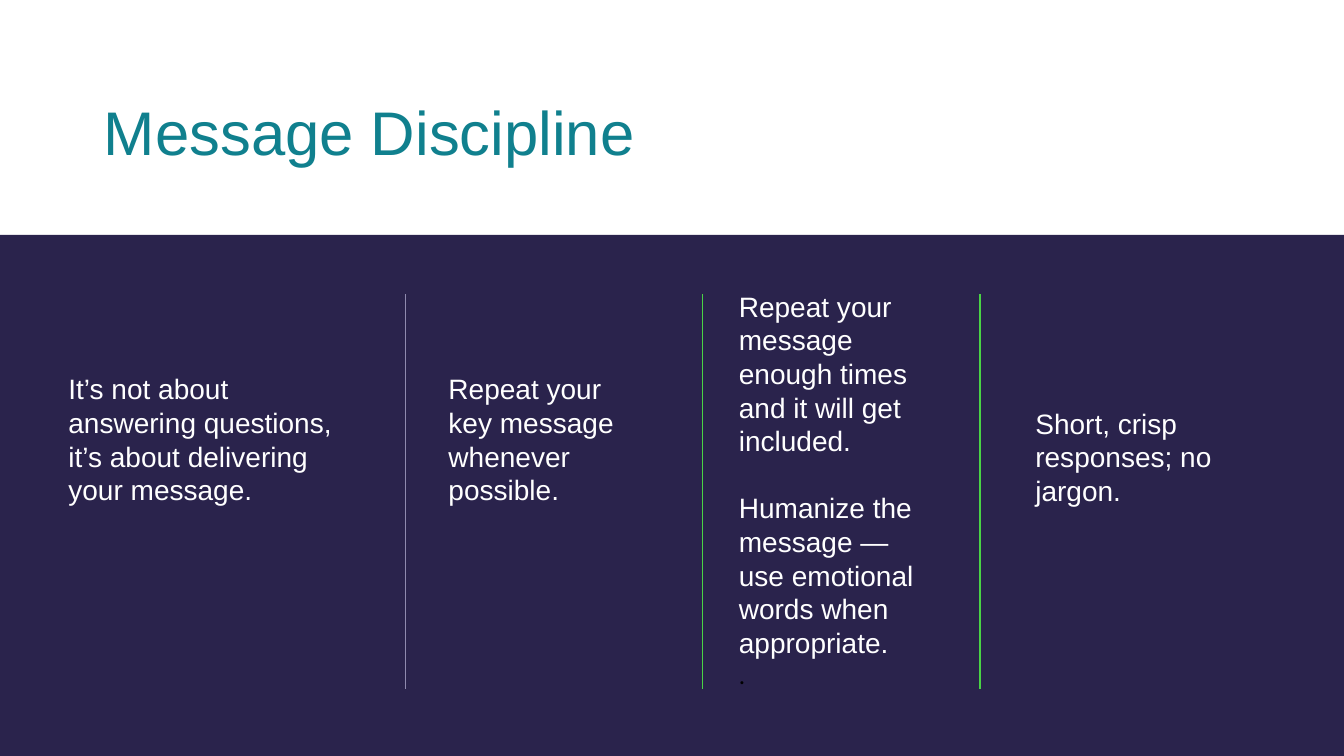
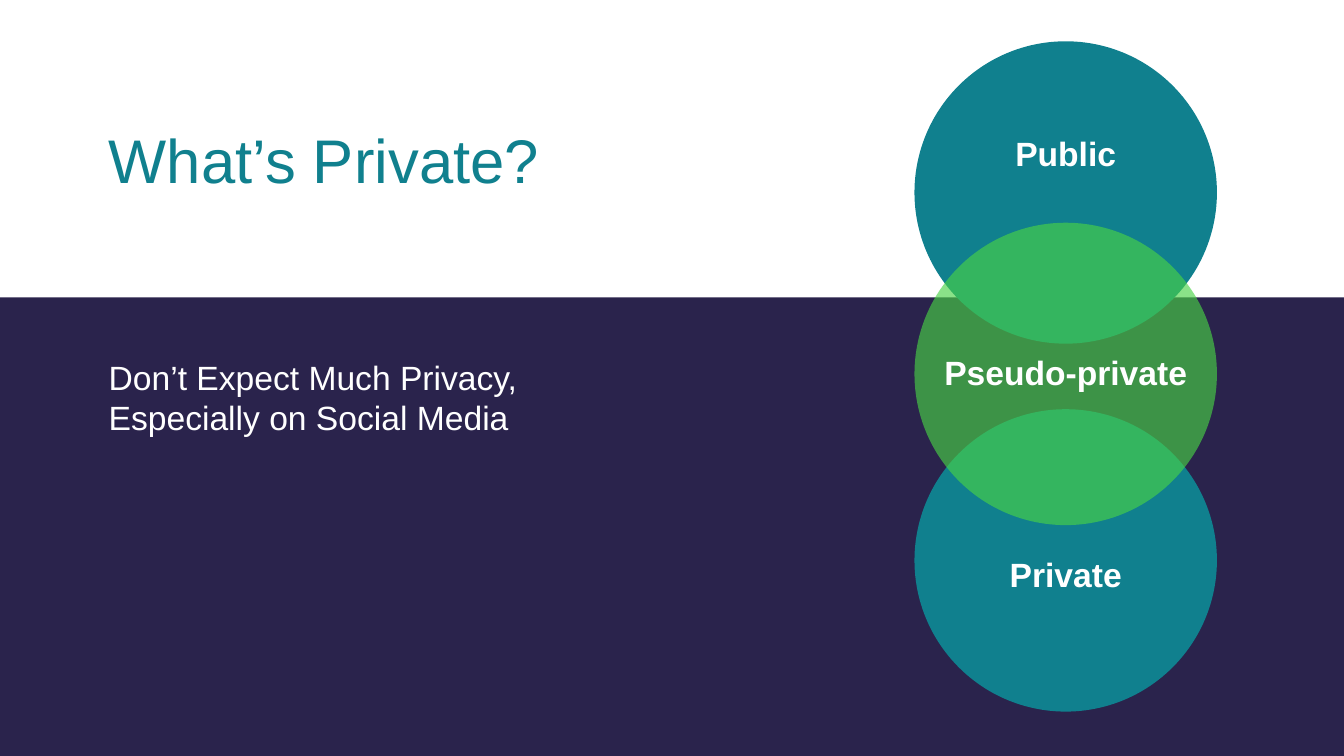
from lxml.etree import SubElement
from pptx import Presentation
from pptx.dml.color import RGBColor
from pptx.enum.shapes import MSO_CONNECTOR, MSO_SHAPE
from pptx.enum.text import MSO_ANCHOR, MSO_AUTO_SIZE, PP_ALIGN
from pptx.oxml.ns import qn
from pptx.util import Inches, Pt

NAVY = "2A234C"
TEAL = "10808E"
GREEN = "49D345"
LAVENDER = "8F8AAE"
WHITE = "FFFFFF"
BLACK = "000000"
FONT = "Arial"


def add_filled_shape(slide, preset, left, top, width, height, color):
    shape = slide.shapes.add_shape(preset, Inches(left), Inches(top), Inches(width), Inches(height))
    shape.shadow.inherit = False
    shape.fill.solid()
    shape.fill.fore_color.rgb = RGBColor.from_string(color)
    shape.line.fill.background()
    return shape


def write_text(shape, box, texts, size, color=WHITE, bold=False, align=PP_ALIGN.LEFT):
    shape.left, shape.top, shape.width, shape.height = [Inches(length) for length in box]
    frame = shape.text_frame
    frame.word_wrap = True
    frame.auto_size = MSO_AUTO_SIZE.SHAPE_TO_FIT_TEXT
    frame.vertical_anchor = MSO_ANCHOR.TOP
    for index, text in enumerate(texts):
        paragraph = frame.add_paragraph() if index else frame.paragraphs[0]
        paragraph.alignment = align
        run = paragraph.add_run()
        run.text = text
        run.font.name = FONT
        run.font.size = Pt(size)
        run.font.bold = bold
        run.font.color.rgb = RGBColor.from_string(color)
    return frame


presentation = Presentation()
presentation.slide_width = Inches(13.33)
presentation.slide_height = Inches(7.5)
title_only = presentation.slide_layouts[5]

slides = []
for title, title_box, band_top in [
    ("Message Discipline", (0.93, 0.88, 7.59, 0.84), 2.33),
    ("What’s Private?", (0.98, 1.16, 8.09, 0.84), 2.95),
]:
    slide = presentation.slides.add_slide(title_only)
    add_filled_shape(slide, MSO_SHAPE.RECTANGLE, 0, band_top, 13.33, 7.5 - band_top, NAVY)
    write_text(slide.shapes.title, title_box, [title], 44, TEAL)
    slides.append(slide)
discipline, privacy = slides

columns = [
    ((0.58, 3.64, 2.93, 1.45), ["It’s not about answering questions, it’s about delivering your message."]),
    ((4.35, 3.64, 2.1, 1.45), ["Repeat your key message whenever possible."]),
    ((7.23, 2.82, 2.17, 4.11), [
        "Repeat your message enough times and it will get included.",
        "Humanize the message — use emotional words when appropriate.",
        ".",
    ]),
    ((10.17, 3.98, 2.49, 1.11), ["Short, crisp responses; no jargon."]),
]
for box, texts in columns:
    frame = write_text(discipline.shapes.add_textbox(0, 0, 0, 0), box, texts, 20)
    if len(texts) > 1:
        frame.paragraphs[1].space_before = Pt(24)
        full_stop = frame.paragraphs[2].runs[0].font
        full_stop.name = "Calibri"
        full_stop.size = Pt(18)
        full_stop.color.rgb = RGBColor.from_string(BLACK)

for left, color, width in [(4.02, LAVENDER, 0.5), (6.97, GREEN, 1), (9.72, GREEN, 1)]:
    divider = discipline.shapes.add_connector(
        MSO_CONNECTOR.STRAIGHT, Inches(left), Inches(2.92), Inches(left), Inches(6.84)
    )
    divider.line.color.rgb = RGBColor.from_string(color)
    divider.line.width = Pt(width)
    SubElement(divider._element.spPr, qn("a:effectLst"))

write_text(
    privacy.shapes.add_textbox(0, 0, 0, 0),
    (0.98, 3.49, 4.89, 0.91),
    ["Don’t Expect Much Privacy, Especially on Social Media"],
    24,
)

circle_left, diameter = 9.07, 3
for label, circle_top, label_top, color, opacity in [
    ("Public", 0.41, 1.27, TEAL, 100),
    ("Private", 4.06, 5.45, TEAL, 100),
    ("Pseudo-private", 2.21, 3.44, GREEN, 64),
]:
    circle = add_filled_shape(
        privacy, MSO_SHAPE.OVAL, circle_left, circle_top, diameter, diameter, color
    )
    if opacity < 100:
        color_element = circle._element.spPr.find(qn("a:solidFill")).find(qn("a:srgbClr"))
        SubElement(color_element, qn("a:alpha"), val=str(opacity * 1000))
    write_text(
        privacy.shapes.add_textbox(0, 0, 0, 0),
        (circle_left, label_top, diameter, 0.5),
        [label],
        24,
        bold=True,
        align=PP_ALIGN.CENTER,
    )

presentation.save("out.pptx")
